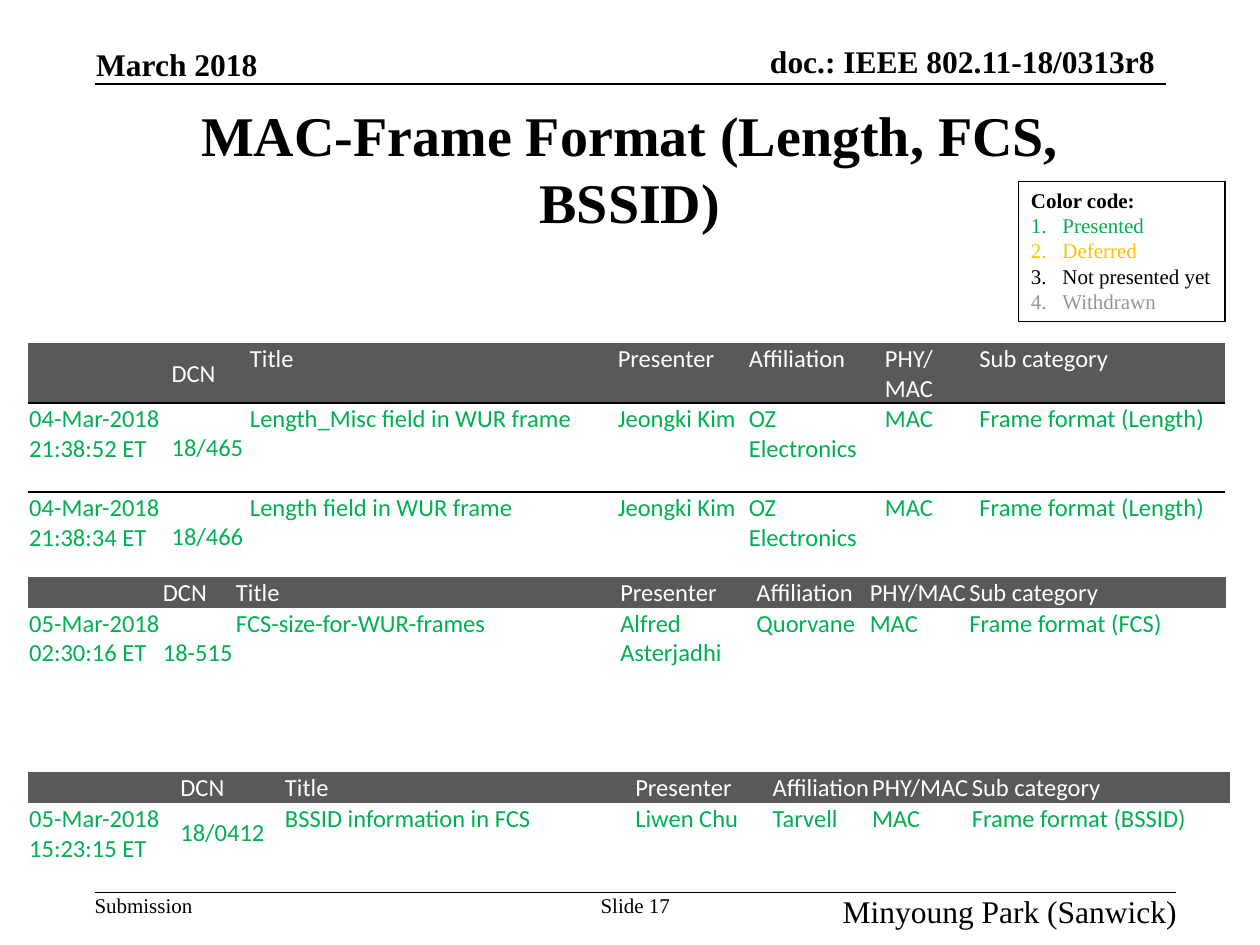
import pptx
import pptx.dml.color
import pptx.enum.shapes
import pptx.enum.text
import pptx.oxml
import pptx.oxml.ns
import pptx.util
from lxml import etree

Pt = pptx.util.Pt
qn = pptx.oxml.ns.qn
ALIGN = pptx.enum.text.PP_ALIGN
ANCHOR = pptx.enum.text.MSO_ANCHOR
NO_STYLE = "{2D5ABB26-0587-4C30-8999-92F81FD0307C}"
SERIF, SANS = "Times New Roman", "Calibri"
BLACK, WHITE, GREEN, AMBER, GRAY, DARK = (
    "000000", "FFFFFF", "00B050", "FFC000", "969696", "595959")


def rgb(value):
    return pptx.dml.color.RGBColor.from_string(value)


class SlideBuilder:
    def __init__(self, prs):
        self.s = prs.slides.add_slide(prs.slide_layouts[5])

    def add_text(self, p, text, color=BLACK, align=ALIGN.LEFT, **font):
        p.alignment = align
        r = p.add_run()
        r.text = text
        for name, value in {"name": SERIF, "size": Pt(12), "bold": False, **font}.items():
            setattr(r.font, name, value)
        r.font.color.rgb = rgb(color)

    def frame(self, tf, margins, anchor, wrap):
        left, top, right, bottom = margins
        layout = {"margin_left": Pt(left), "margin_top": Pt(top),
                  "margin_right": Pt(right), "margin_bottom": Pt(bottom),
                  "vertical_anchor": anchor, "word_wrap": wrap}
        for name, value in layout.items():
            setattr(tf, name, value)

    def title(self, text, box):
        sp = self.s.shapes.title
        sp.left, sp.top, sp.width, sp.height = map(Pt, box)
        self.frame(sp.text_frame, (7.2, 3.6, 7.2, 3.6), ANCHOR.MIDDLE, True)
        self.add_text(sp.text_frame.paragraphs[0], text, align=ALIGN.CENTER,
                      size=Pt(32), bold=True)

    def label(self, text, box, anchor=ANCHOR.TOP, **style):
        tf = self.s.shapes.add_textbox(*map(Pt, box)).text_frame
        self.frame(tf, (0, 0, 0, 0), anchor, False)
        self.add_text(tf.paragraphs[0], text, **style)

    def rule(self, x1, x2, y):
        line = self.s.shapes.add_connector(
            pptx.enum.shapes.MSO_CONNECTOR.STRAIGHT, Pt(x1), Pt(y), Pt(x2), Pt(y))
        line.line.color.rgb = rgb(BLACK)
        line.line.width = Pt(1)
        etree.SubElement(line._element.spPr, qn("a:effectLst"))

    def legend(self, heading, items, box):
        sp = self.s.shapes.add_shape(
            pptx.enum.shapes.MSO_SHAPE.RECTANGLE, *map(Pt, box))
        sp.shadow.inherit = False
        sp.fill.background()
        sp.line.color.rgb = rgb(BLACK)
        sp.line.width = Pt(0.75)
        tf = sp.text_frame
        self.frame(tf, (7.2, 3.6, 7.2, 3.6), ANCHOR.TOP, False)
        self.add_text(tf.paragraphs[0], heading, bold=True)
        for text, color in items:
            p = tf.add_paragraph()
            pPr = p._p.get_or_add_pPr()
            pPr.set("marL", str(Pt(18)))
            pPr.set("indent", str(-Pt(18)))
            etree.SubElement(pPr, qn("a:buAutoNum"), type="arabicPeriod")
            self.add_text(p, text, color)

    def border(self, cell, side):
        ln = etree.Element(qn("a:ln" + side), w=str(Pt(1)))
        fill = etree.SubElement(ln, qn("a:solidFill"))
        etree.SubElement(fill, qn("a:srgbClr"), val=BLACK)
        cell._tc.get_or_add_tcPr().insert(0, ln)

    def cell(self, cell, text, color, fill, anchor):
        for name, value in {"margin_left": Pt(0.7), "margin_top": Pt(0.7),
                            "margin_right": Pt(0.7), "margin_bottom": Pt(0),
                            "vertical_anchor": anchor}.items():
            setattr(cell, name, value)
        if fill:
            cell.fill.solid()
            cell.fill.fore_color.rgb = rgb(fill)
        else:
            cell.fill.background()
        p = cell.text_frame.paragraphs[0]
        if text:
            self.add_text(p, text, color, name=SANS, size=Pt(14))
        else:
            etree.SubElement(p._p, qn("a:endParaRPr"), sz="1400")

    def table(self, left, top, widths, heights, rows):
        table = self.s.shapes.add_table(
            len(rows), len(widths), Pt(left), Pt(top),
            Pt(sum(widths)), Pt(sum(heights))).table
        table.first_row = table.horz_banding = False
        table._tbl.tblPr.find(qn("a:tableStyleId")).text = NO_STYLE
        for column, width in zip(table.columns, widths):
            column.width = Pt(width)
        for i, (values, height) in enumerate(zip(rows, heights)):
            table.rows[i].height = Pt(height)
            color, fill = (GREEN, None) if i else (WHITE, DARK)
            for j, text in enumerate(values):
                cell = table.cell(i, j)
                anchor = ANCHOR.MIDDLE if j == 1 else ANCHOR.TOP
                self.cell(cell, text, color, fill, anchor)
                # Only tables with several entries are ruled between rows
                if len(rows) > 2:
                    if i < len(rows) - 1:
                        self.border(cell, "B")
                    if i:
                        self.border(cell, "T")


def main():
    prs = pptx.Presentation()
    prs.slide_width, prs.slide_height = Pt(720), Pt(540)
    b = SlideBuilder(prs)

    # Header and footer
    header = {"anchor": ANCHOR.BOTTOM, "size": Pt(18), "bold": True}
    b.label("doc.: IEEE 802.11-18/0313r8", (402, 24, 258, 21.6),
            align=ALIGN.RIGHT, **header)
    b.label("March 2018", (55, 26, 106, 21.6), **header)
    b.rule(54, 666, 48)
    b.rule(54, 672, 510)
    b.label("Submission", (54, 510, 56, 14.4))
    b.label("Slide 17", (342, 510, 42, 14.4), align=ALIGN.CENTER)
    b.label("Minyoung Park (Sanwick)", (456, 510, 216.5, 14.4),
            align=ALIGN.RIGHT, size=Pt(18))

    # Title and colour legend
    b.title("MAC-Frame Format (Length, FCS, BSSID)", (54, 54, 612, 84))
    b.legend("Color code:",
             [("Presented", GREEN), ("Deferred", AMBER),
              ("Not presented yet", BLACK), ("Withdrawn", GRAY)],
             (582, 103.7, 118, 80))

    # Submission tables
    heading = ["", "DCN", "Title", "Presenter", "Affiliation", "PHY/MAC", "Sub category"]
    one, two, three = 17.4, 34.2, 50.8  # row heights by number of text lines
    b.table(16, 196, [81.4, 44.8, 210.2, 74.9, 77.8, 54, 141.1], [two, three, three], [
        heading,
        ["04-Mar-2018 21:38:52 ET", "18/465", "Length_Misc field in WUR frame",
         "Jeongki Kim", "OZ Electronics", "MAC", "Frame format (Length)"],
        ["04-Mar-2018 21:38:34 ET", "18/466", "Length field in WUR frame",
         "Jeongki Kim", "OZ Electronics", "MAC", "Frame format (Length)"]])
    b.table(16, 329.7, [76.4, 41.8, 219.6, 77.8, 64.8, 56.9, 147.6], [one, three], [
        heading,
        ["05-Mar-2018 02:30:16 ET", "18-515", "FCS-size-for-WUR-frames",
         "Alfred Asterjadhi", "Quorvane", "MAC", "Frame format (FCS)"]])
    b.table(16, 441.3, [86.4, 59.8, 200.2, 78.5, 56.9, 56.9, 148.3], [one, two], [
        heading,
        ["05-Mar-2018 15:23:15 ET", "18/0412", "BSSID information in FCS",
         "Liwen Chu", "Tarvell", "MAC", "Frame format (BSSID)"]])
    prs.save("out.pptx")


if __name__ == "__main__":
    main()
